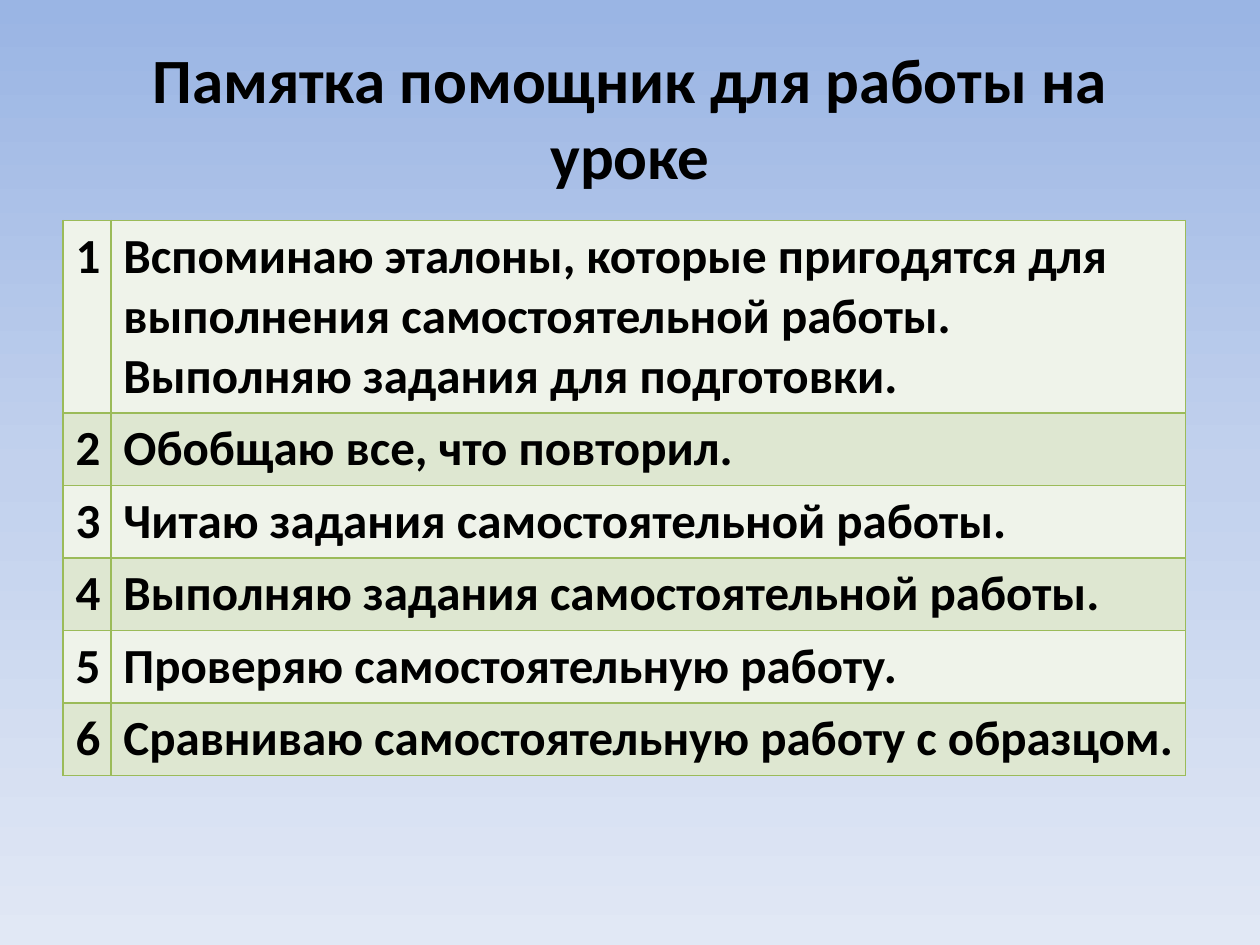
import copy

import pptx
import pptx.dml.color
import pptx.enum.text
import pptx.oxml.ns
import pptx.util
from lxml import etree

RGB = pptx.dml.color.RGBColor
BLACK = RGB(0x00, 0x00, 0x00)
GREEN = RGB(0x9B, 0xBB, 0x59)
BANDS = [RGB(0xEF, 0xF3, 0xEA), RGB(0xDE, 0xE7, 0xD1)]
SKY = [RGB(0x9A, 0xB5, 0xE4), RGB(0xC2, 0xD1, 0xED), RGB(0xE1, 0xE8, 0xF5)]
STEPS = [
    "Вспоминаю эталоны, которые пригодятся для выполнения самостоятельной "
    "работы. Выполняю задания для подготовки.",
    "Обобщаю все, что повторил.",
    "Читаю задания самостоятельной работы.",
    "Выполняю задания самостоятельной работы.",
    "Проверяю самостоятельную работу.",
    "Сравниваю самостоятельную работу с образцом.",
]
MARGIN = pptx.util.Inches(0.5)
ROW_HEIGHT = pptx.util.Inches(0.41)
COLUMN_WIDTHS = [pptx.util.Inches(0.38), pptx.util.Inches(8.53)]
qn = pptx.oxml.ns.qn


def add_bold_run(paragraph, text, size):
    run = paragraph.add_run()
    run.text = text
    run.font.name = "Calibri"
    run.font.size = pptx.util.Pt(size)
    run.font.bold = True
    run.font.color.rgb = BLACK


def add_borders(cell):
    properties = cell._tc.get_or_add_tcPr()
    for side in ("a:lnL", "a:lnR", "a:lnT", "a:lnB"):
        line = etree.SubElement(properties, qn(side), w=str(pptx.util.Pt(1)))
        fill = etree.SubElement(line, qn("a:solidFill"))
        etree.SubElement(fill, qn("a:srgbClr"), val=str(GREEN))


deck = pptx.Presentation()
deck.slide_width = pptx.util.Inches(10)
deck.slide_height = pptx.util.Inches(7.5)
slide = deck.slides.add_slide(deck.slide_layouts[5])

# Sky gradient, top to bottom
sky = slide.background.fill
sky.gradient()
sky.gradient_angle = 270
stops = next(slide.element.iter(qn("a:gsLst")))
stops.insert(1, copy.deepcopy(stops[0]))
for index, (stop, color) in enumerate(zip(sky.gradient_stops, SKY)):
    stop.color.rgb = color
    stop.position = index / (len(SKY) - 1)

# Heading
heading = slide.shapes.title
heading.left, heading.top = MARGIN, pptx.util.Inches(0.3)
heading.width = deck.slide_width - 2 * MARGIN
heading.height = pptx.util.Inches(1.25)
heading.text_frame.vertical_anchor = pptx.enum.text.MSO_ANCHOR.MIDDLE
heading_line = heading.text_frame.paragraphs[0]
heading_line.alignment = pptx.enum.text.PP_ALIGN.CENTER
add_bold_run(heading_line, "Памятка помощник для работы на уроке", 36)

# Numbered steps
steps_table = slide.shapes.add_table(
    len(STEPS), 2, MARGIN, pptx.util.Inches(1.75),
    sum(COLUMN_WIDTHS), ROW_HEIGHT * len(STEPS),
).table
steps_table.first_row = False
for column, width in zip(steps_table.columns, COLUMN_WIDTHS):
    column.width = width
for index, step in enumerate(STEPS):
    steps_table.rows[index].height = ROW_HEIGHT
    for cell, text in zip(steps_table.rows[index].cells, (str(index + 1), step)):
        add_borders(cell)
        cell.fill.solid()
        cell.fill.fore_color.rgb = BANDS[index % 2]
        add_bold_run(cell.text_frame.paragraphs[0], text, 28)

deck.save("out.pptx")
